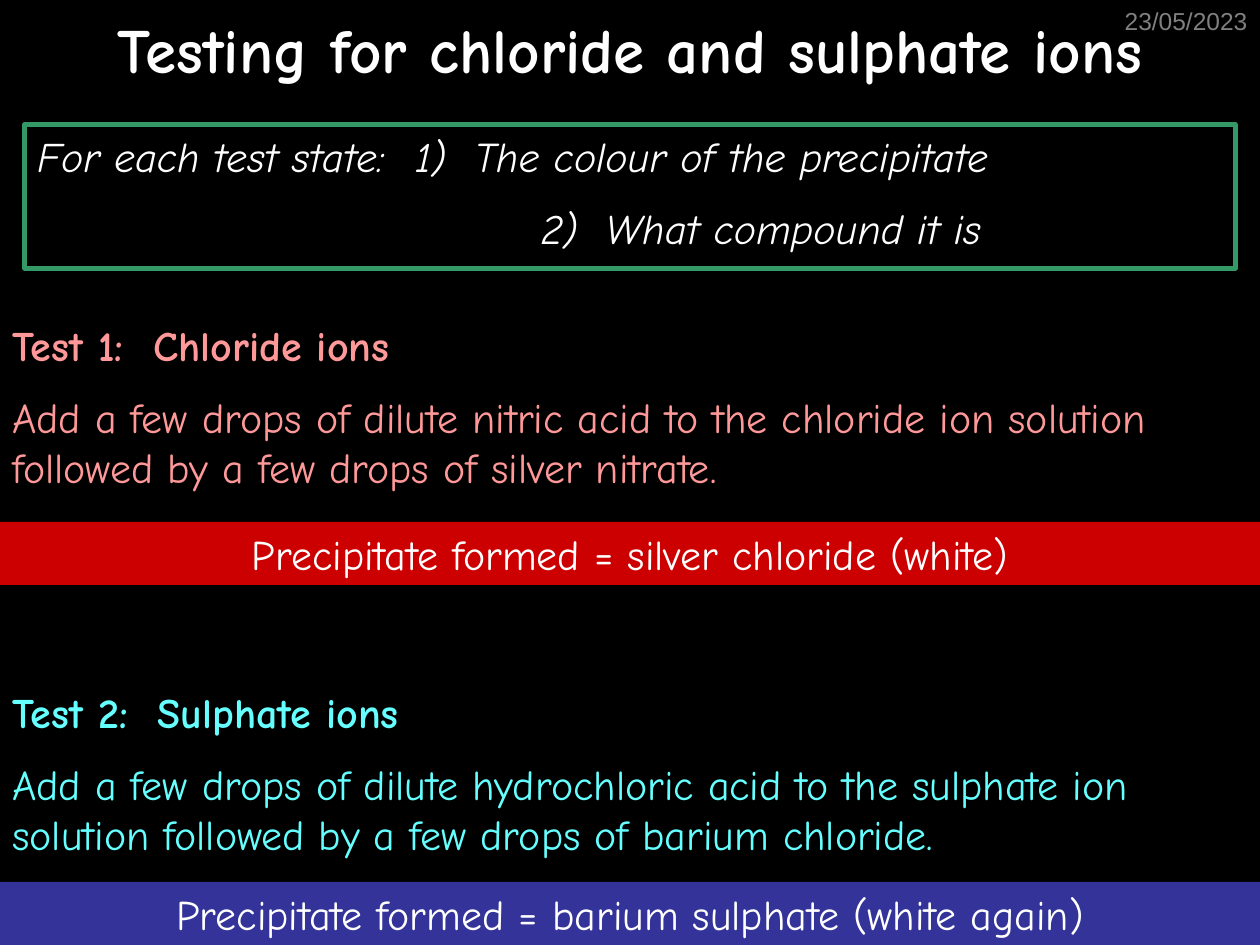
from pptx import Presentation
from pptx.dml.color import RGBColor
from pptx.enum import shapes, text
from pptx.util import Cm, Pt

BLACK = RGBColor(0x00, 0x00, 0x00)
WHITE = RGBColor(0xFF, 0xFF, 0xFF)
GREY = RGBColor(0x80, 0x80, 0x80)
GREEN = RGBColor(0x33, 0x99, 0x66)
RED = RGBColor(0xCC, 0x00, 0x00)
BLUE = RGBColor(0x33, 0x33, 0x99)
PINK = RGBColor(0xFF, 0x99, 0x99)
CYAN = RGBColor(0x66, 0xFF, 0xFF)
WIDE = 25.4


def write(frame, words, first=False, size=24, font="Comic Neue", color=WHITE,
          bold=False, italic=False, align=text.PP_ALIGN.LEFT, indent=0):
    """Write one paragraph; later ones get half a line of space before."""
    frame.word_wrap = True
    para = frame.paragraphs[0] if first else frame.add_paragraph()
    para.alignment = align
    para.space_before = Pt(0 if first else size / 2)
    if indent:
        para._p.get_or_add_pPr().set("marL", str(Cm(indent)))
    run = para.add_run()
    run.text = words
    run.font.name, run.font.size = font, Pt(size)
    run.font.bold, run.font.italic = bold, italic
    run.font.color.rgb = color


def add_box(left, top, width, height, fill=None, line=None):
    """Add a plain rectangle and return its text frame."""
    box = slide.shapes.add_shape(shapes.MSO_SHAPE.RECTANGLE,
                                 Cm(left), Cm(top), Cm(width), Cm(height))
    box.shadow.inherit = False
    if fill is None:
        box.fill.background()
    else:
        box.fill.solid()
        box.fill.fore_color.rgb = fill
    if line is None:
        box.line.fill.background()
    else:
        box.line.color.rgb = line
        box.line.width = Pt(2.75)
    box.text_frame.vertical_anchor = text.MSO_ANCHOR.TOP
    return box.text_frame


deck = Presentation()
deck.slide_width, deck.slide_height = Cm(WIDE), Cm(19.05)
slide = deck.slides.add_slide(deck.slide_layouts[5])
slide.background.fill.solid()
slide.background.fill.fore_color.rgb = BLACK

# Date
date = slide.shapes.add_textbox(Cm(19.48), Cm(0), Cm(5.92), Cm(1.32))
write(date.text_frame, "23/05/2023", first=True, size=14, font="Arial",
      color=GREY, align=text.PP_ALIGN.RIGHT)

# Title
title = slide.shapes.title
title.left, title.top, title.width, title.height = Cm(0), Cm(0), Cm(WIDE), Cm(1.93)
title.text_frame.auto_size = text.MSO_AUTO_SIZE.NONE
title.text_frame.vertical_anchor = text.MSO_ANCHOR.MIDDLE
write(title.text_frame, "Testing for chloride and sulphate ions", first=True,
      size=36, bold=True, align=text.PP_ALIGN.CENTER)

# Task box
task = add_box(0.5, 2.51, 24.4, 2.9, line=GREEN)
write(task, "For each test state:\t1)  The colour of the precipitate",
      first=True, italic=True)
write(task, "2)  What compound it is", italic=True, indent=10.16)

# Tests, each with its result bar
tests = [
    (6.32, WIDE, PINK, "Test 1:  Chloride ions",
     "Add a few drops of dilute nitric acid to the chloride ion solution "
     "followed by a few drops of silver nitrate.",
     10.52, RED, "Precipitate formed = silver chloride (white)"),
    (13.72, 25.1, CYAN, "Test 2:  Sulphate ions",
     "Add a few drops of dilute hydrochloric acid to the sulphate ion "
     "solution followed by a few drops of barium chloride.",
     17.78, BLUE, "Precipitate formed = barium sulphate (white again)"),
]
for top, width, color, head, steps, low, fill, result in tests:
    test = slide.shapes.add_textbox(Cm(0), Cm(top), Cm(width), Cm(3.81))
    write(test.text_frame, head, first=True, color=color, bold=True)
    write(test.text_frame, steps, color=color)
    bar = add_box(0, low, WIDE, 1.27, fill=fill)
    write(bar, result, first=True, align=text.PP_ALIGN.CENTER)

deck.save("out.pptx")
